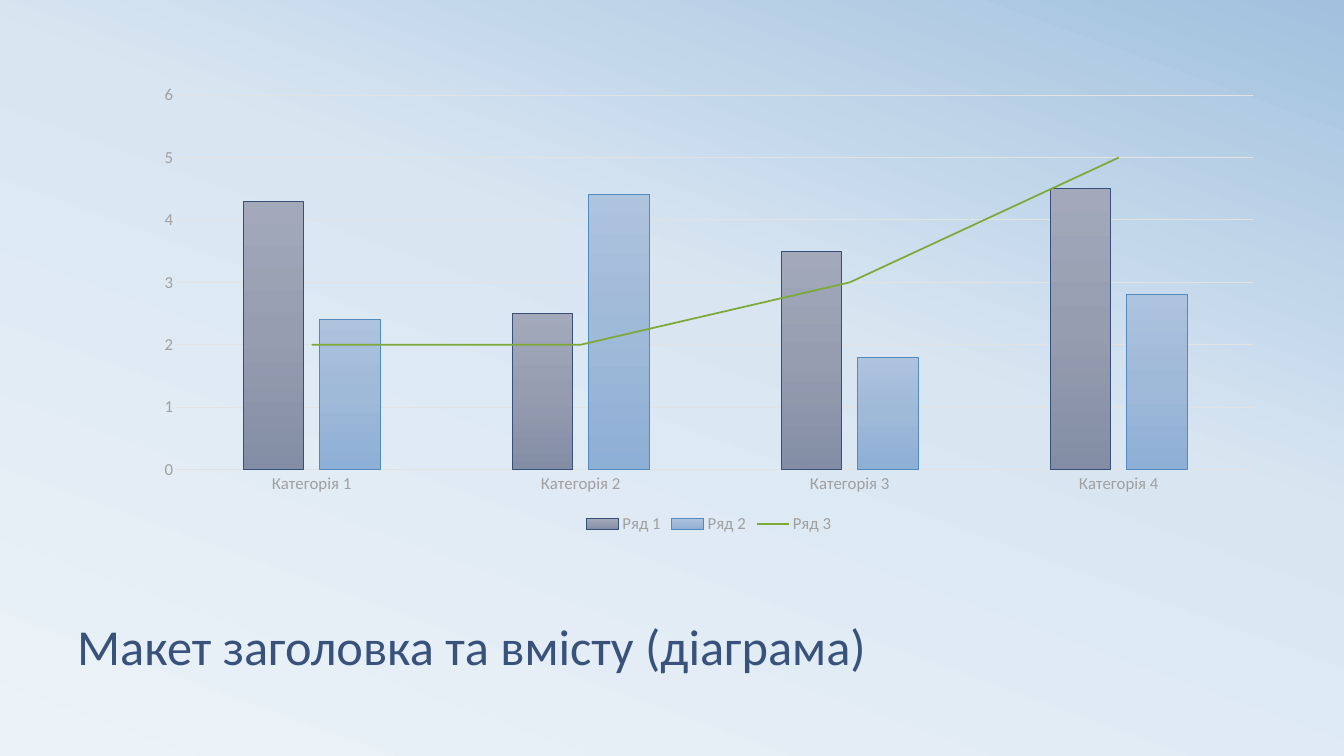
from lxml import etree
from pptx import Presentation
from pptx.chart.data import CategoryChartData
from pptx.dml.color import RGBColor
from pptx.enum.chart import XL_CHART_TYPE, XL_LEGEND_POSITION, XL_MARKER_STYLE, XL_TICK_MARK
from pptx.enum.text import MSO_ANCHOR, MSO_AUTO_SIZE, PP_ALIGN
from pptx.oxml.ns import qn
from pptx.util import Emu, Pt

CLUSTERED = XL_CHART_TYPE.COLUMN_CLUSTERED
LEGEND_BOTTOM = XL_LEGEND_POSITION.BOTTOM
NO_MARKER = XL_MARKER_STYLE.NONE
NO_TICK = XL_TICK_MARK.NONE
ANCHOR_BOTTOM = MSO_ANCHOR.BOTTOM
NO_AUTOFIT = MSO_AUTO_SIZE.NONE
LEFT = PP_ALIGN.LEFT

WIDTH, HEIGHT = 1344, 756
EMU_PER_PX = 12192000 / WIDTH
TITLE_ONLY = 5

COLORS = {
    "title": "39527B",
    "label": "A0A0A0",
    "chart_text": "404040",
    "grid": "E2E2E2",
    "row1_edge": "385078",
    "row2_edge": "508ABE",
    "row3": "7EA939",
}
# Gradient stops: position in percent, colour
BACKDROP = [(0, "ECF3F8"), (58, "D9E6F2"), (100, "A1C1DE")]
ROW1_FILL = [(0, "A3A9BB"), (50, "969DB0"), (100, "838DA5")]
ROW2_FILL = [(0, "ADC3DE"), (50, "9FB9D8"), (100, "8EAFD6")]

CATEGORIES = [f"Категорія {n}" for n in range(1, 5)]
ROWS = {
    "Ряд 1": (4.3, 2.5, 3.5, 4.5),
    "Ряд 2": (2.4, 4.4, 1.8, 2.8),
    "Ряд 3": (2, 2, 3, 5),
}


def px(length):
    return Emu(round(length * EMU_PER_PX))


class SlideBuilder:
    font_name = "Calibri"

    def __init__(self, slide):
        self.slide = slide

    def style_font(self, font, size, color):
        font.name = self.font_name
        font.size = Pt(size)
        font.color.rgb = RGBColor.from_string(COLORS[color])

    def style_line(self, line, color, width):
        line.color.rgb = RGBColor.from_string(COLORS[color])
        line.width = Pt(width)

    def gradient(self, properties, stops, angle):
        """Turn a solid fill into a gradient; the angle runs clockwise."""
        gradient = etree.Element(qn("a:gradFill"), rotWithShape="1")
        stop_list = etree.SubElement(gradient, qn("a:gsLst"))
        for position, color in stops:
            stop = etree.SubElement(stop_list, qn("a:gs"), pos=str(position * 1000))
            etree.SubElement(stop, qn("a:srgbClr"), val=color)
        etree.SubElement(gradient, qn("a:lin"), ang=str(angle * 60000), scaled="0")
        properties.replace(properties.find(qn("a:solidFill")), gradient)

    def background(self, stops, angle):
        self.slide.background.fill.solid()
        properties = self.slide._element.find(f".//{qn('p:bgPr')}")
        self.gradient(properties, stops, angle)

    def title(self, text, left, top, width, height):
        title = self.slide.shapes.title
        title.left, title.top = px(left), px(top)
        title.width, title.height = px(width), px(height)
        frame = title.text_frame
        frame.text = text
        frame.word_wrap = True
        frame.auto_size = NO_AUTOFIT
        frame.vertical_anchor = ANCHOR_BOTTOM
        heading = frame.paragraphs[0]
        heading.alignment = LEFT
        heading.line_spacing = 0.8
        self.style_font(heading.font, 36, "title")

    def combo_chart(self, categories, rows, left, top, width, height):
        data = CategoryChartData()
        data.categories = categories
        for name, values in rows.items():
            data.add_series(name, values)
        chart = self.slide.shapes.add_chart(
            CLUSTERED, px(left), px(top), px(width), px(height), data).chart
        self.style_font(chart.font, 10, "chart_text")
        chart.has_title = False
        self.last_row_to_line(chart)
        self.axes(chart)

        chart.has_legend = True
        chart.legend.position = LEGEND_BOTTOM
        chart.legend.include_in_layout = False
        self.style_font(chart.legend.font, 12, "label")
        return chart

    def last_row_to_line(self, chart):
        """Move the last series into a line plot on the same axes."""
        bars = chart._chartSpace.find(f".//{qn('c:barChart')}")
        row = bars.findall(qn("c:ser"))[-1]
        for bar_only in row.findall(qn("c:invertIfNegative")):
            row.remove(bar_only)
        lines = chart._chartSpace.makeelement(qn("c:lineChart"))
        etree.SubElement(lines, qn("c:grouping"), val="standard")
        etree.SubElement(lines, qn("c:varyColors"), val="0")
        lines.append(row)
        etree.SubElement(lines, qn("c:marker"), val="1")
        for axis in bars.findall(qn("c:axId")):
            etree.SubElement(lines, qn("c:axId"), val=axis.get("val"))
        bars.addnext(lines)

    def axes(self, chart):
        for axis in (chart.category_axis, chart.value_axis):
            axis.major_tick_mark = axis.minor_tick_mark = NO_TICK
            self.style_font(axis.tick_labels.font, 12, "label")
        self.style_line(chart.category_axis.format.line, "grid", 0.75)
        scale = chart.value_axis
        scale.minimum_scale, scale.maximum_scale, scale.major_unit = 0, 6, 1
        scale.format.line.fill.background()
        scale.has_major_gridlines = True
        self.style_line(scale.major_gridlines.format.line, "grid", 0.75)

    def bar_row(self, row, stops, edge):
        row.invert_if_negative = False
        row.format.fill.solid()
        self.style_line(row.format.line, edge, 0.75)
        properties = row._element.find(qn("c:spPr"))
        self.gradient(properties, stops, 90)

    def line_row(self, row, color):
        self.style_line(row.format.line, color, 1.25)
        row.marker.style = NO_MARKER
        row.smooth = False


def main():
    deck = Presentation()
    deck.slide_width, deck.slide_height = px(WIDTH), px(HEIGHT)
    builder = SlideBuilder(deck.slides.add_slide(deck.slide_layouts[TITLE_ONLY]))

    # Backdrop and title
    builder.background(BACKDROP, 290)
    builder.title("Макет заголовка та вмісту (діаграма)", 67, 562, 1210, 118)

    # Columns with a line over them
    chart = builder.combo_chart(CATEGORIES, ROWS, 142, 76, 1134, 462)
    columns, trend = chart.plots
    columns.gap_width, columns.overlap = 219, -27
    columns.vary_by_categories = False
    row1, row2 = columns.series
    builder.bar_row(row1, ROW1_FILL, "row1_edge")
    builder.bar_row(row2, ROW2_FILL, "row2_edge")
    builder.line_row(trend.series[0], "row3")

    deck.save("out.pptx")


if __name__ == "__main__":
    main()
